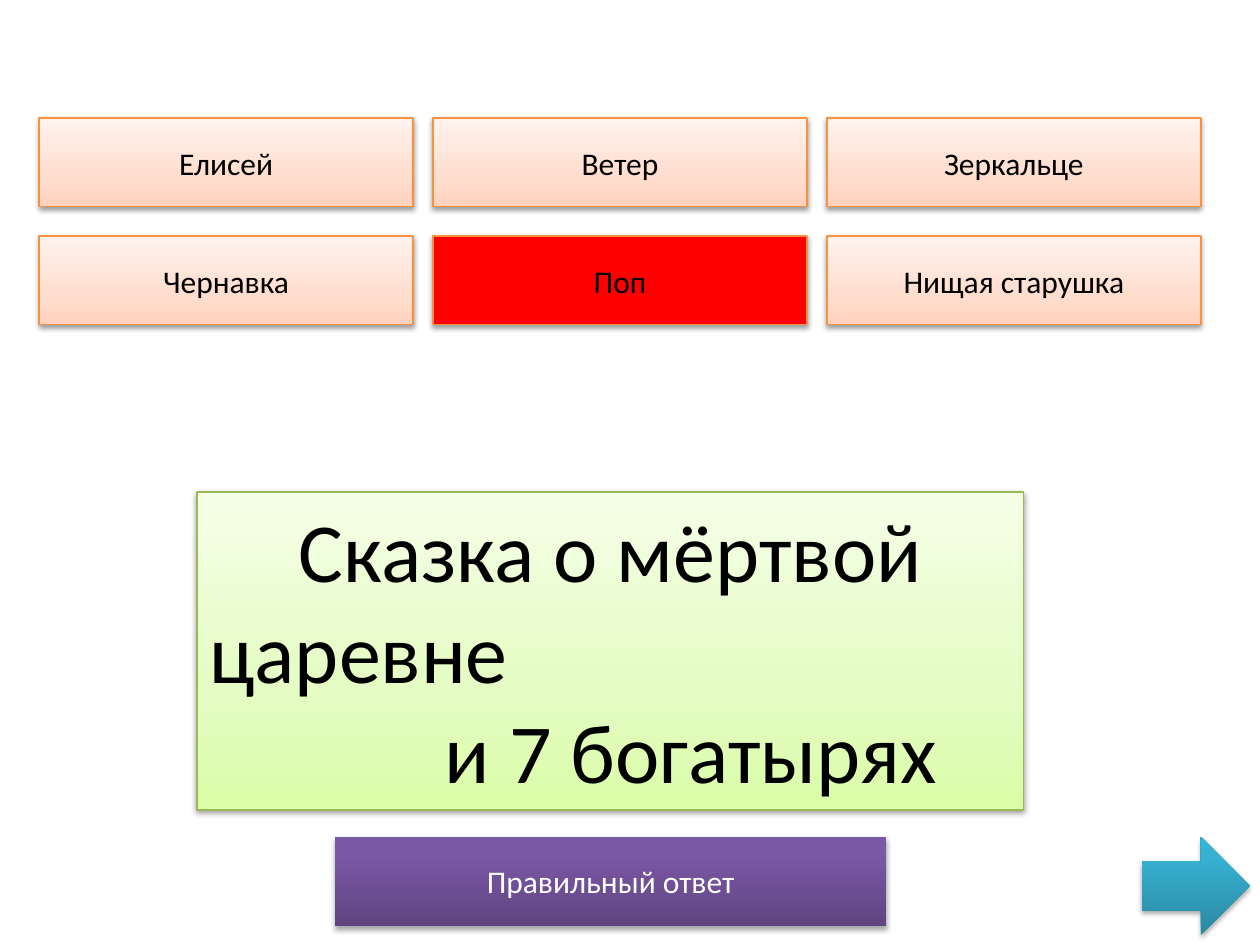
from lxml.etree import SubElement
from pptx import Presentation
from pptx.dml.color import RGBColor
from pptx.enum.shapes import MSO_SHAPE as SHAPE
from pptx.enum.text import MSO_ANCHOR as ANCHOR, PP_ALIGN as ALIGN
from pptx.oxml.ns import qn
from pptx.util import Cm, Pt

# Gradient stops run from the bottom edge (0) to the top edge (100)
PEACH = [(0, "FFD2BD"), (35, "FFDED0"), (100, "FFF2ED")]
GREEN = [(0, "DAFDA7"), (35, "E4FCC2"), (100, "F5FFE7")]
PURPLE = [(0, "5F4480"), (80, "7B58A6"), (100, "7C57A8")]
TEAL = [(0, "2A88A2"), (80, "37B1D2"), (100, "34B4D6")]
RED = [(0, "FF0000")]


def add_box(kind, x, y, w, h, stops, line=None):
    """Add a shape with a solid or gradient fill, an outline and a soft shadow."""
    sp = s.shapes.add_shape(kind, Cm(x), Cm(y), Cm(w), Cm(h))
    if len(stops) == 1:
        sp.fill.solid()
        sp.fill.fore_color.rgb = RGBColor.from_string(stops[0][1])
    else:
        sp.fill.gradient()
        sp.fill.gradient_angle = 90
        gs_lst = sp._element.spPr.find(".//" + qn("a:gsLst"))
        gs_lst.clear()
        for pos, color in stops:
            gs = SubElement(gs_lst, qn("a:gs"), pos=str(pos * 1000))
            SubElement(gs, qn("a:srgbClr"), val=color)
    if line:
        sp.line.color.rgb = RGBColor.from_string(line)
        sp.line.width = Pt(0.75)
    else:
        sp.line.fill.background()
    sp.shadow.inherit = False
    effects = sp._element.spPr.find(qn("a:effectLst"))
    shadow = SubElement(effects, qn("a:outerShdw"), blurRad=str(Pt(3.1)),
                        dist=str(Pt(1.6 if line else 1.8)), dir="5400000", rotWithShape="0")
    clr = SubElement(shadow, qn("a:srgbClr"), val="000000")
    SubElement(clr, qn("a:alpha"), val="38000" if line else "35000")
    return sp


def add_text(p, text, size, color="000000", align=ALIGN.CENTER):
    p.alignment = align
    r = p.add_run()
    r.text = text
    r.font.name = "Calibri"
    r.font.size = Pt(size)
    r.font.color.rgb = RGBColor.from_string(color)


prs = Presentation()
prs.slide_width, prs.slide_height = Cm(25.4), Cm(19.05)
s = prs.slides.add_slide(prs.slide_layouts[6])

# Answer button and arrow to the next slide
sp = add_box(SHAPE.RECTANGLE, 6.75, 16.87, 11.12, 1.79, PURPLE)
add_text(sp.text_frame.paragraphs[0], "Правильный ответ", 18, "FFFFFF")
add_box(SHAPE.RIGHT_ARROW, 23.02, 16.87, 2.18, 1.98, TEAL)

# Grid of characters, the odd one out in red
names = ["Елисей", "Ветер", "Зеркальце", "Чернавка", "Поп", "Нищая старушка"]
for i, name in enumerate(names):
    row, col = divmod(i, 3)
    sp = add_box(SHAPE.RECTANGLE, 0.79 + col * 7.94, 2.38 + row * 2.38, 7.54, 1.79,
                 RED if name == "Поп" else PEACH, "F69240")
    add_text(sp.text_frame.paragraphs[0], name, 18)

# Title of the tale
sp = add_box(SHAPE.RECTANGLE, 3.97, 9.92, 16.67, 6.41, GREEN, "98B955")
tf = sp.text_frame
tf.word_wrap = True
tf.vertical_anchor = ANCHOR.TOP
tale = [("Сказка о мёртвой", ALIGN.CENTER, 0),
        ("царевне", ALIGN.LEFT, 0),
        ("и 7 богатырях", ALIGN.LEFT, 4.75)]
for i, (text, align, indent) in enumerate(tale):
    p = tf.add_paragraph() if i else tf.paragraphs[0]
    add_text(p, text, 48, align=align)
    if indent:
        p._p.get_or_add_pPr().set("marL", str(Cm(indent)))

prs.save("out.pptx")
